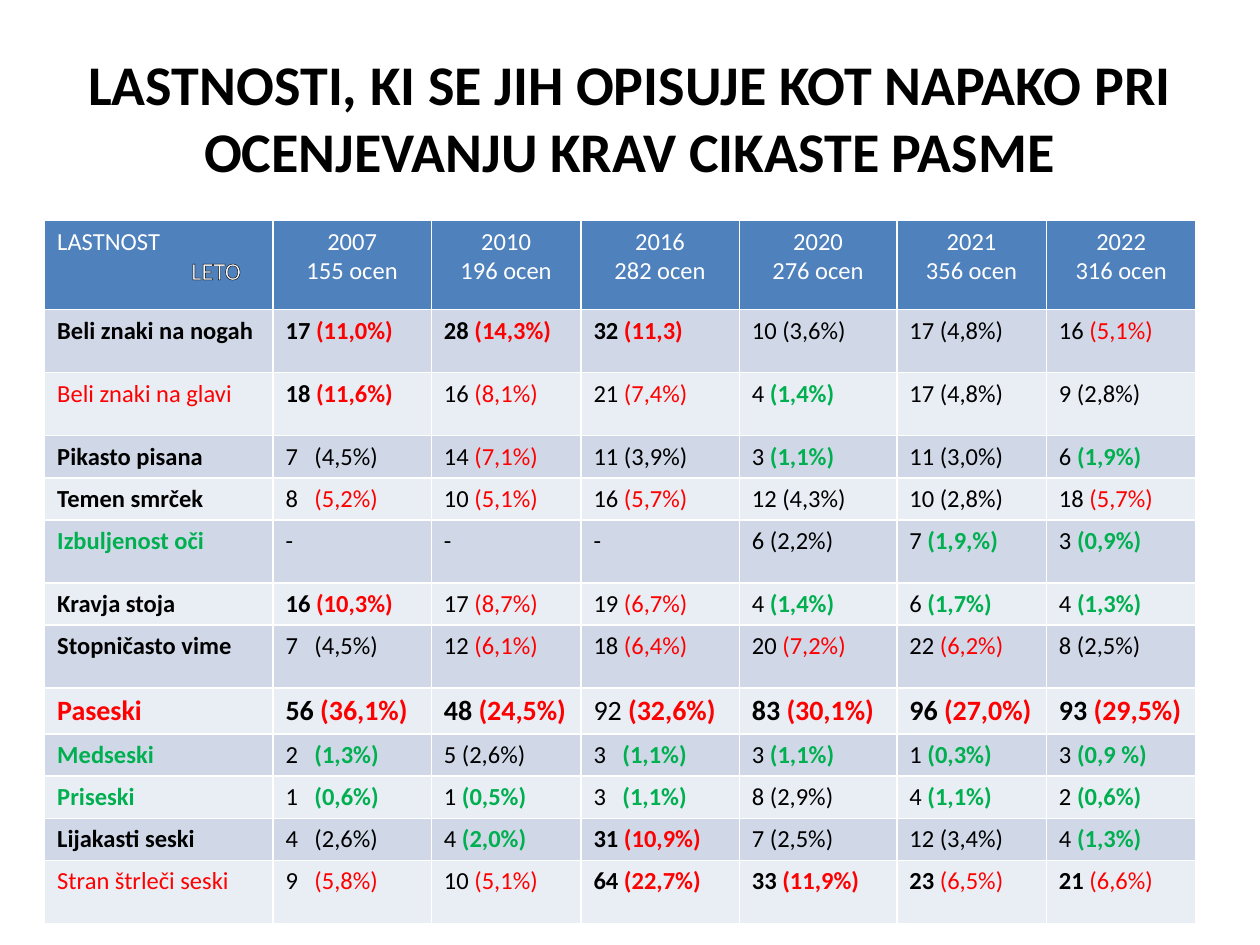
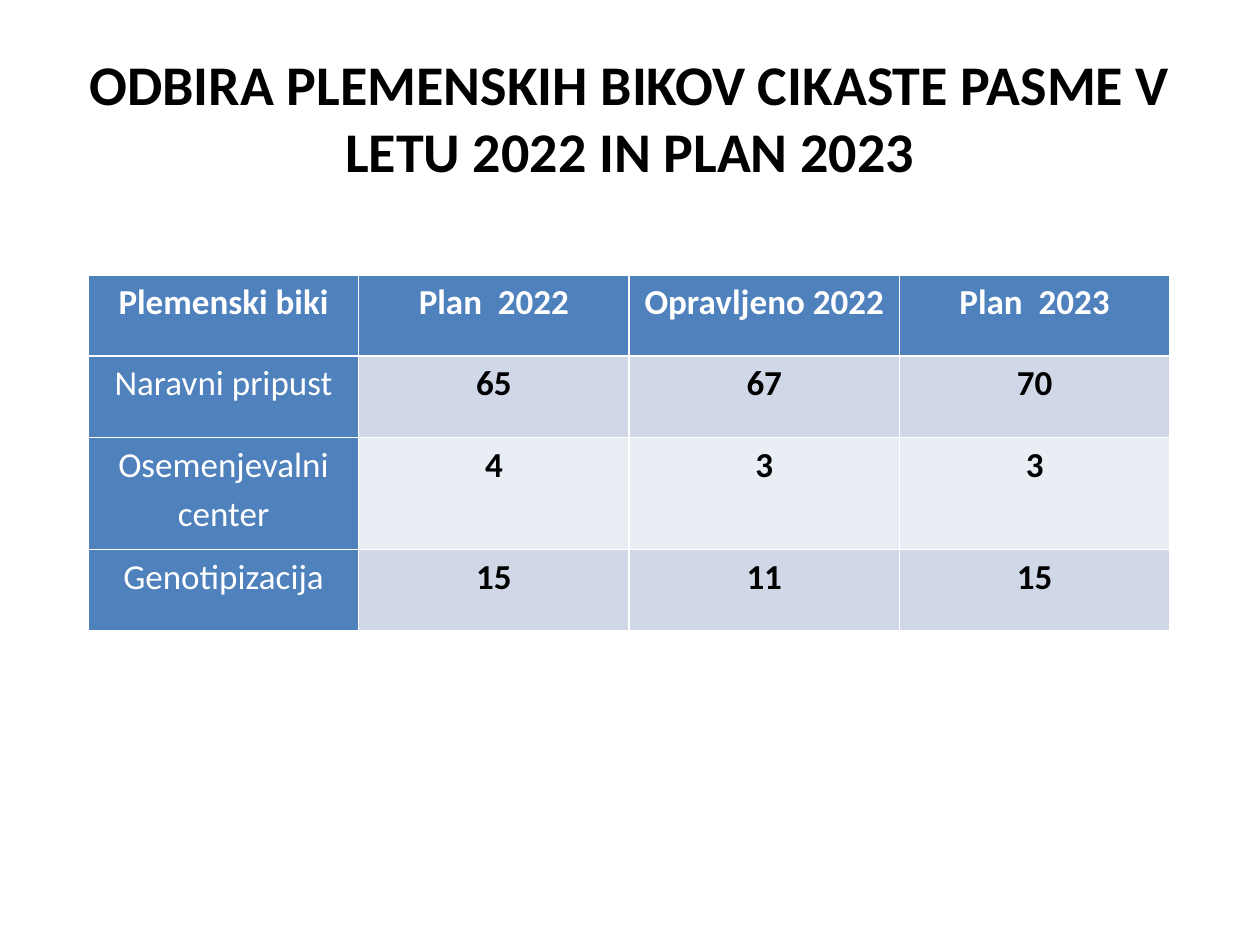
"""Build two slides on the assessment and selection of cika cattle."""
import lxml.etree
import pptx
import pptx.dml.color
import pptx.enum.text
import pptx.oxml.ns
import pptx.util

Pt = pptx.util.Pt
ALIGN = pptx.enum.text.PP_ALIGN
BLACK, WHITE, RED, GREEN = "000000", "FFFFFF", "FF0000", "00B050"
HEADER, BANDS = "4F81BD", ("D0D8E8", "E9EDF4")

YEARS = [("2007", 155), ("2010", 196), ("2016", 282), ("2020", 276), ("2021", 356), ("2022", 316)]
TRAIT_WIDTHS = [130.5, 90.5, 85.5, 90.5, 90, 85.5, 85.5]
TALL, SHORT = 36, 23
TRAITS = [
    ("Beli znaki na nogah", BLACK, True, TALL,
     ["17 (11,0%)", "28 (14,3%)", "32 (11,3)", "10 (3,6%)", "17 (4,8%)", "16 (5,1%)"]),
    ("Beli znaki na glavi", RED, False, TALL,
     ["18 (11,6%)", "16 (8,1%)", "21 (7,4%)", "4 (1,4%)", "17 (4,8%)", "9 (2,8%)"]),
    ("Pikasto pisana", BLACK, True, SHORT,
     ["7\t(4,5%)", "14 (7,1%)", "11 (3,9%)", "3 (1,1%)", "11 (3,0%)", "6 (1,9%)"]),
    ("Temen smrček", BLACK, True, SHORT,
     ["8\t(5,2%)", "10 (5,1%)", "16 (5,7%)", "12 (4,3%)", "10 (2,8%)", "18 (5,7%)"]),
    ("Izbuljenost oči", GREEN, True, TALL,
     ["-", "-", "-", "6 (2,2%)", "7 (1,9,%)", "3 (0,9%)"]),
    ("Kravja stoja", BLACK, True, SHORT,
     ["16 (10,3%)", "17 (8,7%)", "19 (6,7%)", "4 (1,4%)", "6 (1,7%)", "4 (1,3%)"]),
    ("Stopničasto vime", BLACK, True, TALL,
     ["7\t(4,5%)", "12 (6,1%)", "18 (6,4%)", "20 (7,2%)", "22 (6,2%)", "8 (2,5%)"]),
    ("Paseski", RED, True, SHORT,
     ["56 (36,1%)", "48 (24,5%)", "92 (32,6%)", "83 (30,1%)", "96 (27,0%)", "93 (29,5%)"]),
    ("Medseski", GREEN, True, SHORT,
     ["2\t(1,3%)", "5 (2,6%)", "3\t(1,1%)", "3 (1,1%)", "1 (0,3%)", "3 (0,9 %)"]),
    ("Priseski", GREEN, True, SHORT,
     ["1\t(0,6%)", "1 (0,5%)", "3\t(1,1%)", "8 (2,9%)", "4 (1,1%)", "2 (0,6%)"]),
    ("Lijakasti seski", BLACK, True, SHORT,
     ["4\t(2,6%)", "4 (2,0%)", "31 (10,9%)", "7 (2,5%)", "12 (3,4%)", "4 (1,3%)"]),
    ("Stran štrleči seski", RED, False, TALL,
     ["9\t(5,8%)", "10 (5,1%)", "64 (22,7%)", "33 (11,9%)", "23 (6,5%)", "21 (6,6%)"]),
]
LARGE_TRAIT = "Paseski"
SWAPPED_WEIGHT = {"92 (32,6%)", "23 (6,5%)", "21 (6,6%)"}

BULLS = [
    ["Plemenski biki", "Plan  2022", "Opravljeno 2022", "Plan  2023"],
    ["Naravni pripust", "65", "67", "70"],
    ["Osemenjevalni center", "4", "3", "3"],
    ["Genotipizacija", "15", "11", "15"],
]


def rgb(value):
    return pptx.dml.color.RGBColor.from_string(value)


def write(para, text, size=14, color=BLACK, bold=False, outline=None):
    span = para.add_run()
    span.text = text
    span.font.name = "Calibri"
    span.font.size = Pt(size)
    span.font.bold = bold
    span.font.color.rgb = rgb(color)
    if outline:
        line = lxml.etree.Element(pptx.oxml.ns.qn("a:ln"), w=str(Pt(0.75)))
        fill = lxml.etree.SubElement(line, pptx.oxml.ns.qn("a:solidFill"))
        lxml.etree.SubElement(fill, pptx.oxml.ns.qn("a:srgbClr"), val=outline)
        span._r.get_or_add_rPr().insert(0, line)


def add_tab_stop(para, position):
    tabs = lxml.etree.SubElement(para._p.get_or_add_pPr(), pptx.oxml.ns.qn("a:tabLst"))
    lxml.etree.SubElement(tabs, pptx.oxml.ns.qn("a:tab"), pos=str(Pt(position)), algn="l")


def write_share(para, text, size):
    count, bracket, share = text.partition("(")
    if not bracket:
        write(para, text, size)
        return
    if "\t" in count:
        add_tab_stop(para, 16.5)
    percent = float(share.rstrip("%), ").replace(",", "."))
    color = RED if percent > 5 else GREEN if percent <= 2 else BLACK
    high = percent >= 10
    write(para, count, size, bold=high != (text in SWAPPED_WEIGHT))
    write(para, bracket + share, size, color, bold=high or color == GREEN)


class Slides:
    def __init__(self):
        self.deck = pptx.Presentation()
        self.deck.slide_width, self.deck.slide_height = Pt(720), Pt(540)
        self.page = None

    def add_page(self, title):
        self.page = self.deck.slides.add_slide(self.deck.slide_layouts[6])
        box = self.page.shapes.add_textbox(Pt(36), Pt(21.6), Pt(648), Pt(90))
        box.text_frame.word_wrap = True
        box.text_frame.vertical_anchor = pptx.enum.text.MSO_ANCHOR.MIDDLE
        para = box.text_frame.paragraphs[0]
        para.alignment = ALIGN.CENTER
        write(para, title, size=32, bold=True)

    def add_table(self, left, top, widths, heights):
        frame = self.page.shapes.add_table(
            len(heights), len(widths), Pt(left), Pt(top), Pt(sum(widths)), Pt(sum(heights)))
        table = frame.table
        for column, width in zip(table.columns, widths):
            column.width = Pt(width)
        for row, height in zip(table.rows, heights):
            row.height = Pt(height)
        return table

    def fill_cell(self, table, row, column, heading=False):
        cell = table.cell(row, column)
        cell.fill.solid()
        cell.fill.fore_color.rgb = rgb(HEADER if heading else BANDS[(row - 1) % 2])
        return cell

    def add_trait_table(self):
        heights = [51] + [trait[3] for trait in TRAITS]
        table = self.add_table(25.5, 126, TRAIT_WIDTHS, heights)
        frame = self.fill_cell(table, 0, 0, heading=True).text_frame
        write(frame.paragraphs[0], "LASTNOST", color=WHITE)
        para = frame.add_paragraph()
        para._p.get_or_add_pPr().set("marL", str(Pt(76.5)))
        write(para, "LETO", color=WHITE, outline=BLACK)
        for column, (year, total) in enumerate(YEARS, 1):
            frame = self.fill_cell(table, 0, column, heading=True).text_frame
            for para, text in ((frame.paragraphs[0], year), (frame.add_paragraph(), f"{total} ocen")):
                para.alignment = ALIGN.CENTER
                write(para, text, color=WHITE)
        for row, (label, color, bold, _, shares) in enumerate(TRAITS, 1):
            size = 16 if label == LARGE_TRAIT else 14
            cell = self.fill_cell(table, row, 0)
            write(cell.text_frame.paragraphs[0], label, size, color, bold)
            for column, share in enumerate(shares, 1):
                cell = self.fill_cell(table, row, column)
                write_share(cell.text_frame.paragraphs[0], share, size)

    def add_bull_table(self):
        table = self.add_table(50.5, 157, [154.5] * 4, [46.5, 46.5, 64, 46.5])
        for row, texts in enumerate(BULLS):
            for column, text in enumerate(texts):
                heading = row == 0 or column == 0
                cell = self.fill_cell(table, row, column, heading)
                cell.margin_left = cell.margin_right = Pt(5)
                cell.margin_top = cell.margin_bottom = 0
                para = cell.text_frame.paragraphs[0]
                para.alignment = ALIGN.CENTER
                para.line_spacing = 1.15
                write(para, text, size=20, color=WHITE if heading else BLACK,
                      bold=row == 0 or column > 0)


def main():
    slides = Slides()
    slides.add_page("LASTNOSTI, KI SE JIH OPISUJE KOT NAPAKO PRI OCENJEVANJU KRAV CIKASTE PASME")
    slides.add_trait_table()
    slides.add_page("ODBIRA PLEMENSKIH BIKOV CIKASTE PASME V LETU 2022 IN PLAN 2023")
    slides.add_bull_table()
    slides.deck.save("out.pptx")


if __name__ == "__main__":
    main()
